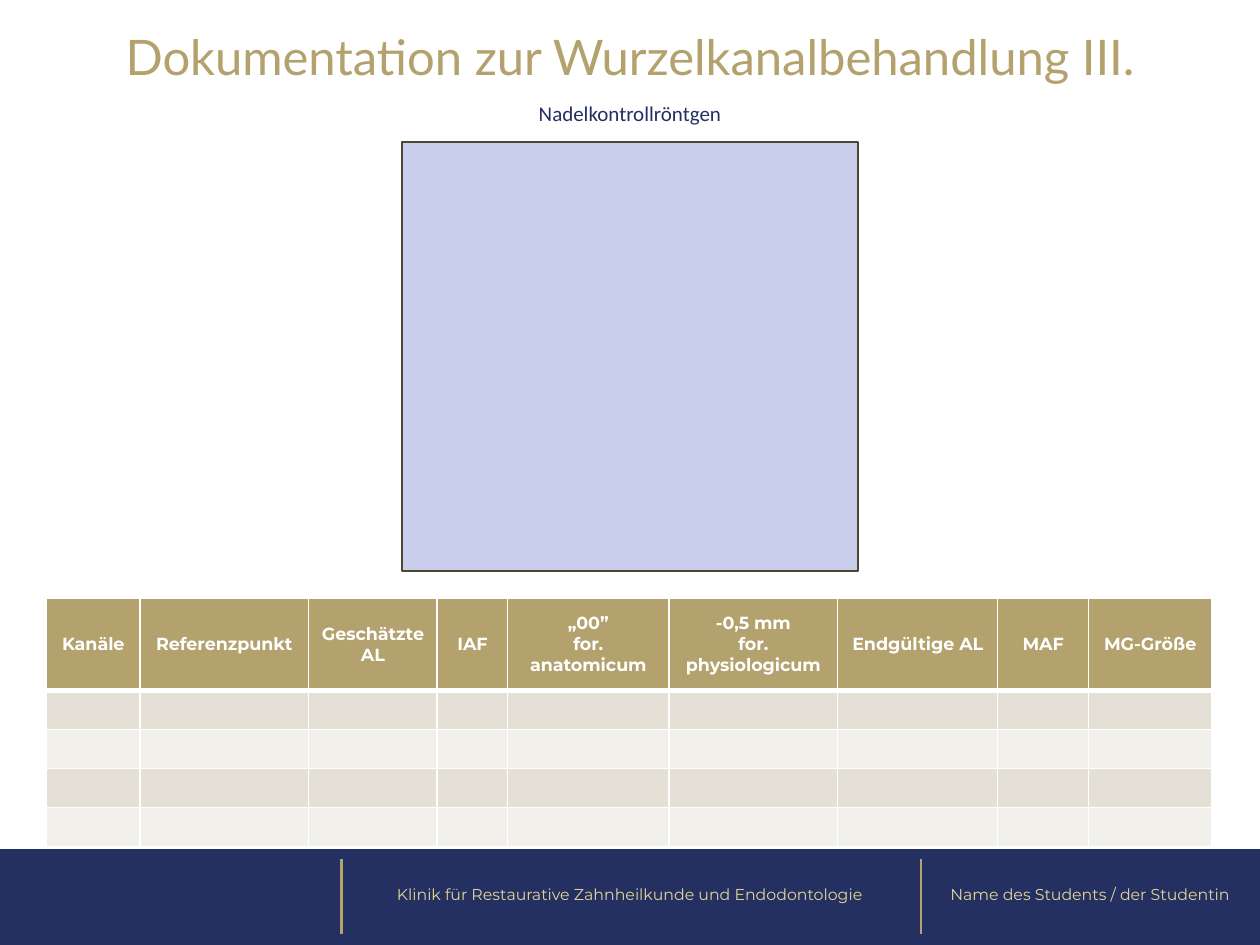
from typing import NamedTuple

from lxml.etree import SubElement
from pptx import Presentation
from pptx.dml.color import RGBColor
from pptx.enum.shapes import MSO_CONNECTOR, MSO_SHAPE
from pptx.enum.text import MSO_ANCHOR, PP_ALIGN
from pptx.oxml import parse_xml
from pptx.oxml.ns import nsdecls, qn
from pptx.util import Inches, Pt

NAVY = RGBColor(0x24, 0x2F, 0x62)
GOLD = RGBColor(0xB3, 0xA1, 0x6E)
PALE_GOLD = RGBColor(0xE3, 0xD4, 0x96)
WHITE = RGBColor(0xFF, 0xFF, 0xFF)
BAND_DARK = RGBColor(0xE5, 0xE0, 0xD5)
BAND_LIGHT = RGBColor(0xF2, 0xF0, 0xEB)
LAVENDER = RGBColor(0xC8, 0xCE, 0xEB)
BROWN = RGBColor(0x4E, 0x47, 0x30)


class Box(NamedTuple):
    left: float
    top: float
    width: float
    height: float

    def lengths(self) -> list:
        return [Inches(v) for v in self]


class Column(NamedTuple):
    header: str
    width: float


COLUMNS = [
    Column("Kanäle", 0.74),
    Column("Referenzpunkt", 1.34),
    Column("Geschätzte AL", 1.02),
    Column("IAF", 0.56),
    Column("„00”\nfor. anatomicum", 1.28),
    Column("-0,5 mm\nfor. physiologicum", 1.34),
    Column("Endgültige AL", 1.27),
    Column("MAF", 0.72),
    Column("MG-Größe", 0.98),
]
ROW_HEIGHTS = [0.73, 0.31, 0.31, 0.31, 0.31]


def write(tf, text: str, *, size: float, font: str, color: RGBColor,
          bold: bool = False, spacing: float = 1.0) -> None:
    """Fill a text frame with centred paragraphs, one per line of text."""
    for i, line in enumerate(text.split("\n")):
        p = tf.add_paragraph() if i else tf.paragraphs[0]
        p.alignment = PP_ALIGN.CENTER
        p.line_spacing = spacing
        r = p.add_run()
        r.text = line
        r.font.size = Pt(size)
        r.font.name = font
        r.font.bold = bold
        r.font.color.rgb = color


def add_text(s, box: Box, text: str, **style) -> None:
    tf = s.shapes.add_textbox(*box.lengths()).text_frame
    tf.word_wrap = True
    tf.vertical_anchor = MSO_ANCHOR.MIDDLE
    write(tf, text, spacing=0.9, **style)


def add_rect(s, box: Box, fill: RGBColor, line: RGBColor | None = None) -> None:
    sp = s.shapes.add_shape(MSO_SHAPE.RECTANGLE, *box.lengths())
    sp.shadow.inherit = False
    sp.fill.solid()
    sp.fill.fore_color.rgb = fill
    if line is None:
        sp.line.fill.background()
    else:
        sp.line.color.rgb = line
        sp.line.width = Pt(1)


def add_divider(s, x: float, top: float, bottom: float) -> None:
    c = s.shapes.add_connector(MSO_CONNECTOR.STRAIGHT, Inches(x), Inches(top),
                               Inches(x), Inches(bottom))
    c.line.color.rgb = GOLD
    c.line.width = Pt(1.5)
    SubElement(c._element.spPr, qn("a:effectLst"))


def style_cell(cell, fill: RGBColor, bottom: float = 1, top: float = 1) -> None:
    """Set the fill and white borders; border widths are in points."""
    cell.vertical_anchor = MSO_ANCHOR.MIDDLE
    cell.fill.solid()
    cell.fill.fore_color.rgb = fill
    tc_pr = cell._tc.get_or_add_tcPr()
    sides = {"L": 1, "R": 1, "T": top, "B": bottom}
    for i, (side, width) in enumerate(sides.items()):
        tc_pr.insert(i, parse_xml(
            f'<a:ln{side} {nsdecls("a")} w="{Pt(width)}"><a:solidFill>'
            f'<a:srgbClr val="{WHITE}"/></a:solidFill></a:ln{side}>'))


def add_canal_table(s, left: float, top: float) -> None:
    box = Box(left, top, sum(c.width for c in COLUMNS), sum(ROW_HEIGHTS))
    table = s.shapes.add_table(len(ROW_HEIGHTS), len(COLUMNS),
                               *box.lengths()).table
    for row, height in zip(table.rows, ROW_HEIGHTS):
        row.height = Inches(height)
    for j, column in enumerate(COLUMNS):
        table.columns[j].width = Inches(column.width)
        header = table.cell(0, j)
        style_cell(header, GOLD, bottom=3)
        write(header.text_frame, column.header, size=10, font="Montserrat",
              color=WHITE, bold=True)
        for i in range(1, len(ROW_HEIGHTS)):
            cell = table.cell(i, j)
            style_cell(cell, BAND_DARK if i % 2 else BAND_LIGHT,
                       top=3 if i == 1 else 1)
            # Small empty text keeps the row at its set height
            p = cell.text_frame.paragraphs[0]
            SubElement(p._p, qn("a:endParaRPr"), sz="1000")


def main() -> None:
    prs = Presentation()
    prs.slide_width, prs.slide_height = Inches(10), Inches(7.5)
    s = prs.slides.add_slide(prs.slide_layouts[6])

    # Footer
    add_rect(s, Box(0, 6.74, 10, 0.77), NAVY)
    for x in (2.71, 7.31):
        add_divider(s, x, 6.82, 7.41)
    footer = dict(size=9, font="Montserrat", color=PALE_GOLD)
    add_text(s, Box(2.69, 6.71, 4.61, 0.79),
             "Klinik für Restaurative Zahnheilkunde und Endodontologie", **footer)
    add_text(s, Box(7.3, 6.71, 2.7, 0.79),
             "Name des Students / der Studentin", **footer)

    # Canal table
    add_canal_table(s, 0.37, 4.75)

    # Headings
    add_text(s, Box(0, 0.02, 10, 0.9),
             "Dokumentation zur Wurzelkanalbehandlung III.",
             size=28, font="Lato", color=GOLD)
    add_text(s, Box(1.1, 0.69, 7.8, 0.44), "Nadelkontrollröntgen",
             size=12, font="Calibri", color=NAVY)

    # X-ray area
    add_rect(s, Box(3.19, 1.13, 3.62, 3.4), LAVENDER, BROWN)

    prs.save("out.pptx")


if __name__ == "__main__":
    main()
